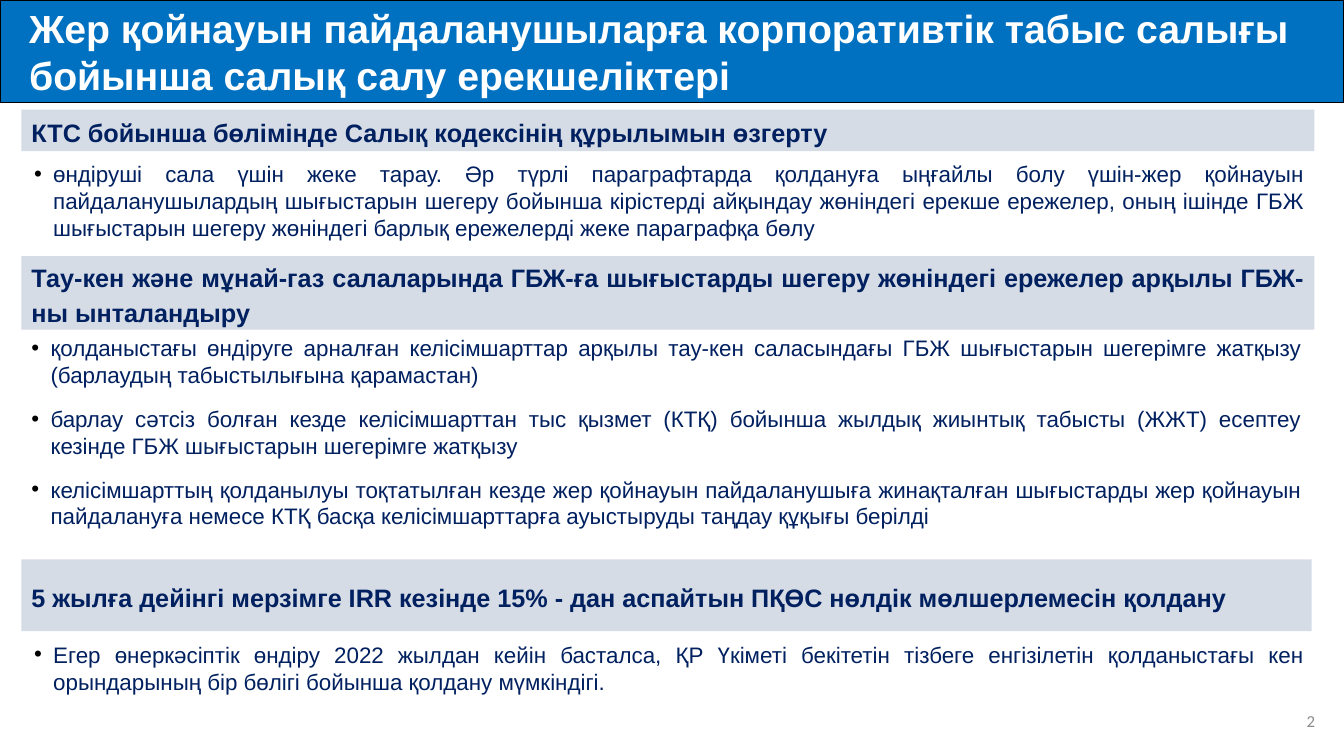
from lxml.etree import SubElement
from pptx import Presentation
from pptx.dml.color import RGBColor
from pptx.enum.shapes import MSO_SHAPE
from pptx.enum.text import MSO_ANCHOR, MSO_AUTO_SIZE, PP_ALIGN
from pptx.oxml.ns import qn
from pptx.util import Inches, Pt

COLORS = {"blue": "0070C0", "navy": "002060", "band": "D6DCE5",
          "white": "FFFFFF", "black": "000000", "gray": "8C8C8C"}
INDENT = Inches(0.19)
TAB = Inches(11.24)
LEVEL = 4


class Deck:
    def __init__(self):
        self.file = Presentation()
        self.file.slide_width = Inches(13.33)
        self.file.slide_height = Inches(7.5)
        self.slide = self.file.slides.add_slide(self.file.slide_layouts[6])

    def place(self, left, top, width, height):
        """Turn percent shares of the slide into lengths."""
        wide, high = self.file.slide_width, self.file.slide_height
        return [int(size * share / 100) for size, share in
                ((wide, left), (high, top), (wide, width), (high, height))]

    def style(self, para, size, color, bold=False, font="Arial"):
        for run in para.runs:
            run.font.size = Pt(size)
            run.font.name = font
            run.font.bold = bold
            run.font.color.rgb = RGBColor.from_string(COLORS[color])

    def layout(self, para, bullet=False):
        """Set level, indent, bullet and tab stop of a justified paragraph."""
        para.level = LEVEL
        para.alignment = PP_ALIGN.JUSTIFY
        props = para._p.get_or_add_pPr()
        props.set("marL", str(INDENT if bullet else 0))
        props.set("indent", str(-INDENT if bullet else 0))
        if bullet:
            tint = SubElement(props, qn("a:buClr"))
            SubElement(tint, qn("a:srgbClr"), val=COLORS["black"])
            SubElement(props, qn("a:buFont"), typeface="Arial")
            SubElement(props, qn("a:buChar"), char="•")
        tabs = SubElement(props, qn("a:tabLst"))
        SubElement(tabs, qn("a:tab"), pos=str(TAB), algn="l")

    def rect(self, box, fill, text):
        shape = self.slide.shapes.add_shape(MSO_SHAPE.RECTANGLE, *self.place(*box))
        shape.shadow.inherit = False
        shape.fill.solid()
        shape.fill.fore_color.rgb = RGBColor.from_string(COLORS[fill])
        shape.line.fill.background()
        frame = shape.text_frame
        frame.word_wrap = True
        frame.vertical_anchor = MSO_ANCHOR.MIDDLE
        frame.text = text
        return shape, frame.paragraphs[0]

    def title(self, box, text):
        shape, para = self.rect(box, "blue", text)
        shape.line.color.rgb = RGBColor.from_string(COLORS["black"])
        shape.line.width = Pt(1)
        para.alignment = PP_ALIGN.LEFT
        para._p.get_or_add_pPr().set("marL", str(INDENT))
        self.style(para, 28, "white", bold=True)

    def band(self, box, text):
        para = self.rect(box, "band", text)[1]
        self.layout(para)
        para.line_spacing = 1.14
        self.style(para, 18, "navy", bold=True)

    def text(self, box, text):
        frame = self.slide.shapes.add_textbox(*self.place(*box)).text_frame
        frame.word_wrap = True
        frame.text = text
        return frame

    def points(self, box, items):
        frame = self.text(box, "\n".join(items))
        frame.auto_size = MSO_AUTO_SIZE.SHAPE_TO_FIT_TEXT
        for rank, para in enumerate(frame.paragraphs):
            self.layout(para, bullet=True)
            para.space_before = Pt(6 if rank else 0)
            para.space_after = Pt(6)
            self.style(para, 16, "navy")

    def number(self, box, text):
        frame = self.text(box, text)
        frame.vertical_anchor = MSO_ANCHOR.MIDDLE
        para = frame.paragraphs[0]
        para.alignment = PP_ALIGN.RIGHT
        self.style(para, 12, "gray", font="Calibri")


# Each section: band box, heading, list box, list items
SECTIONS = [
    ((1.6, 14.5, 96.2, 5.5),
     "КТС бойынша бөлімінде Салық кодексінің құрылымын өзгерту",
     (1.8, 20.5, 96, 12.1),
     ["өндіруші сала үшін жеке тарау. Әр түрлі параграфтарда қолдануға ыңғайлы "
      "болу үшін-жер қойнауын пайдаланушылардың шығыстарын шегеру бойынша "
      "кірістерді айқындау жөніндегі ерекше ережелер, оның ішінде ГБЖ шығыстарын "
      "шегеру жөніндегі барлық ережелерді жеке параграфқа бөлу"]),
    ((1.6, 33.9, 96.2, 9.7),
     "Тау-кен және мұнай-газ салаларында ГБЖ-ға шығыстарды шегеру жөніндегі "
     "ережелер арқылы ГБЖ-ны ынталандыру",
     (1.6, 43.6, 96, 28.3),
     ["қолданыстағы өндіруге арналған келісімшарттар арқылы тау-кен саласындағы "
      "ГБЖ шығыстарын шегерімге жатқызу (барлаудың табыстылығына қарамастан)",
      "барлау сәтсіз болған кезде келісімшарттан тыс қызмет (КТҚ) бойынша жылдық "
      "жиынтық табысты (ЖЖТ) есептеу кезінде ГБЖ шығыстарын шегерімге жатқызу",
      "келісімшарттың қолданылуы тоқтатылған кезде жер қойнауын пайдаланушыға "
      "жинақталған шығыстарды жер қойнауын пайдалануға немесе КТҚ басқа "
      "келісімшарттарға ауыстыруды таңдау құқығы берілді"]),
    ((1.6, 74, 96, 9.5),
     "5 жылға дейінгі мерзімге IRR кезінде 15% - дан аспайтын ПҚӨС нөлдік "
     "мөлшерлемесін қолдану",
     (1.8, 84.1, 96, 8.5),
     ["Егер өнеркәсіптік өндіру 2022 жылдан кейін басталса, ҚР Үкіметі бекітетін "
      "тізбеге енгізілетін қолданыстағы кен орындарының бір бөлігі бойынша "
      "қолдану мүмкіндігі."]),
]


def main():
    deck = Deck()
    deck.title((0, 0, 100, 13.6),
               "Жер қойнауын пайдаланушыларға корпоративтік табыс салығы "
               "бойынша салық салу ерекшеліктері")
    for band, head, area, items in SECTIONS:
        deck.band(band, head)
        deck.points(area, items)
    deck.number((76.1, 92.7, 22.5, 5.3), "2")
    deck.file.save("out.pptx")


if __name__ == "__main__":
    main()
